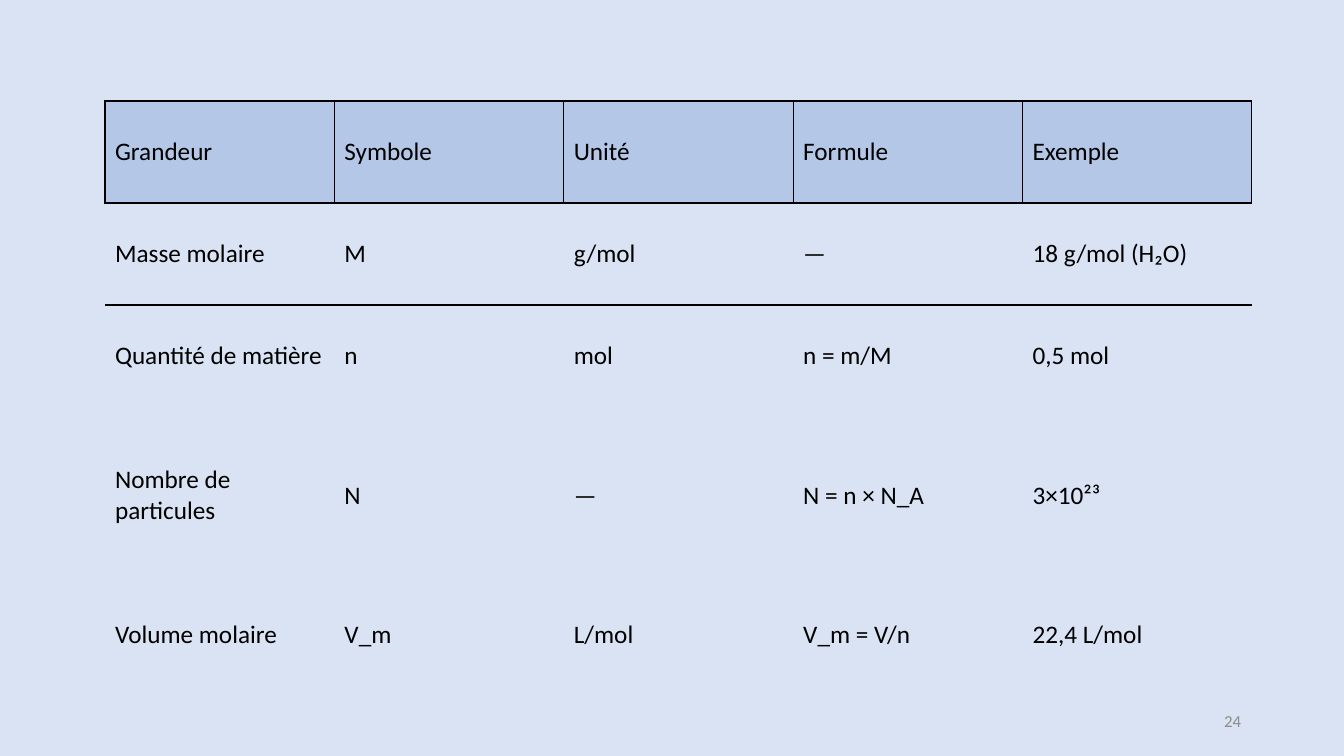
from dataclasses import dataclass

import lxml.etree
import pptx
import pptx.dml.color
import pptx.enum.text
import pptx.oxml.ns
import pptx.util

PX = 914400 / 100.8  # EMU in one px
NO_STYLE = "{2D5ABB26-0587-4C30-8999-92F81FD0307C}"  # plain table, no grid


@dataclass(frozen=True)
class Theme:
    font: str = "Calibri"
    background: str = "DAE3F3"
    header: str = "B4C7E7"
    text: str = "000000"
    muted: str = "8C8C8C"
    body_size: int = 18
    number_size: int = 12
    border: int = 1


THEME = Theme()

QUANTITIES = [
    ("Grandeur", "Symbole", "Unité", "Formule", "Exemple"),
    ("Masse molaire", "M", "g/mol", "—", "18 g/mol (H₂O)"),
    ("Quantité de matière", "n", "mol", "n = m/M", "0,5 mol"),
    ("Nombre de particules", "N", "—", "N = n × N_A", "3×10²³"),
    ("Volume molaire", "V_m", "L/mol", "V_m = V/n", "22,4 L/mol"),
]
ROW_HEIGHTS = (102, 102, 102, 177, 102)


def px(length):
    return pptx.util.Emu(round(length * PX))


def rgb(colour):
    return pptx.dml.color.RGBColor.from_string(colour)


def add_span(para, text, size, colour):
    span = para.add_run()
    span.text = text
    span.font.name = THEME.font
    span.font.size = pptx.util.Pt(size)
    span.font.color.rgb = rgb(colour)


def draw_borders(cell, sides):
    qn = pptx.oxml.ns.qn
    properties = cell._tc.get_or_add_tcPr()
    for side in sides:
        line = lxml.etree.SubElement(
            properties, qn(f"a:ln{side}"), w=str(pptx.util.Pt(THEME.border)))
        fill = lxml.etree.SubElement(line, qn("a:solidFill"))
        lxml.etree.SubElement(fill, qn("a:srgbClr"), val=THEME.text)


def add_quantity_table(page, left, top, width):
    columns = len(QUANTITIES[0])
    frame = page.shapes.add_table(
        len(QUANTITIES), columns, px(left), px(top), px(width), px(sum(ROW_HEIGHTS)))
    table = frame.table
    table.horz_banding = False
    table._tbl.tblPr.find(pptx.oxml.ns.qn("a:tableStyleId")).text = NO_STYLE
    for column in table.columns:
        column.width = px(width / columns)

    for index, (values, height) in enumerate(zip(QUANTITIES, ROW_HEIGHTS)):
        table.rows[index].height = px(height)
        for cell, value in zip(table.rows[index].cells, values):
            cell.vertical_anchor = pptx.enum.text.MSO_ANCHOR.MIDDLE
            add_span(cell.text_frame.paragraphs[0], value, THEME.body_size, THEME.text)
            # Only the header row is framed and filled
            if index == 0:
                draw_borders(cell, "LRTB")
                cell.fill.solid()
                cell.fill.fore_color.rgb = rgb(THEME.header)
            else:
                draw_borders(cell, "T" if index == 1 else "")
                cell.fill.background()


def add_page_number(page, left, top, width, height, number):
    box = page.shapes.add_textbox(px(left), px(top), px(width), px(height))
    frame = box.text_frame
    frame.word_wrap = True
    frame.vertical_anchor = pptx.enum.text.MSO_ANCHOR.MIDDLE
    para = frame.paragraphs[0]
    para.alignment = pptx.enum.text.PP_ALIGN.RIGHT
    add_span(para, str(number), THEME.number_size, THEME.muted)


def main():
    deck = pptx.Presentation()
    deck.slide_width, deck.slide_height = px(1344), px(756)
    page = deck.slides.add_slide(deck.slide_layouts[6])

    # Background
    page.background.fill.solid()
    page.background.fill.fore_color.rgb = rgb(THEME.background)

    # Page number and table
    add_page_number(page, 949, 701, 302, 40, 24)
    add_quantity_table(page, 105, 101, 1147)
    deck.save("out.pptx")


if __name__ == "__main__":
    main()
